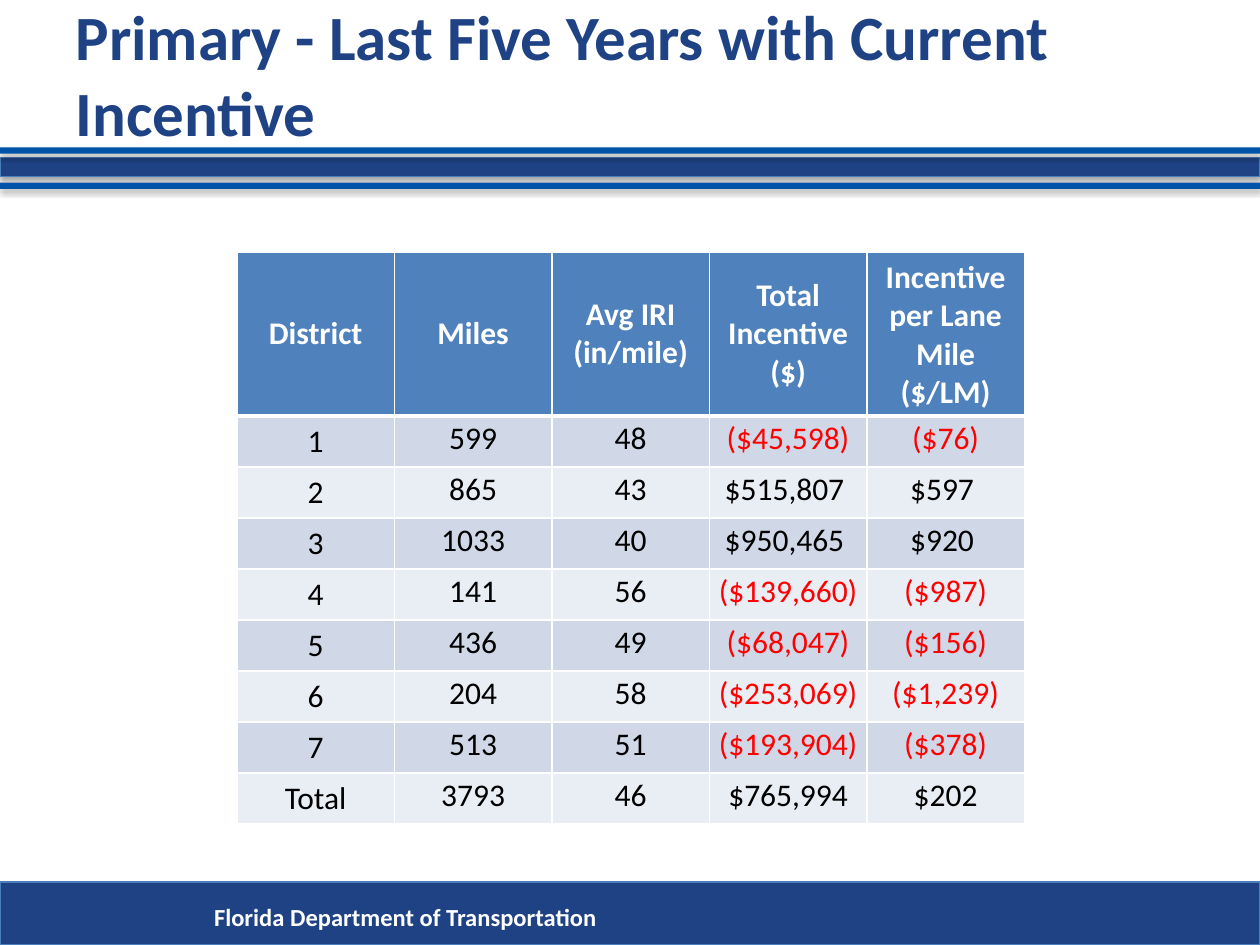
from lxml.etree import SubElement
from pptx import Presentation
from pptx.dml.color import RGBColor
from pptx.enum.shapes import MSO_SHAPE as Shape
from pptx.enum.text import MSO_ANCHOR as Anchor, PP_ALIGN as Align
from pptx.oxml import parse_xml
from pptx.oxml.ns import nsdecls, qn
from pptx.util import Inches, Pt

NAVY = RGBColor(0x1F, 0x42, 0x84)
STRIPE_BLUE = RGBColor(0x00, 0x54, 0xA8)
EDGE_BLUE = RGBColor(0x4B, 0x7E, 0xBC)
HEADER_BLUE = RGBColor(0x4F, 0x81, 0xBD)
ODD_ROW = RGBColor(0xD0, 0xD8, 0xE8)
EVEN_ROW = RGBColor(0xE9, 0xED, 0xF4)
WHITE = RGBColor(0xFF, 0xFF, 0xFF)
BLACK = RGBColor(0x00, 0x00, 0x00)
RED = RGBColor(0xFF, 0x00, 0x00)

HEADINGS = ["District", "Miles", "Avg IRI (in/mile)", "Total Incentive ($)",
            "Incentive per Lane Mile ($/LM)"]
DISTRICTS = [
    ["1", "599", "48", "($45,598)", "($76)"],
    ["2", "865", "43", "$515,807 ", "$597 "],
    ["3", "1033", "40", "$950,465 ", "$920 "],
    ["4", "141", "56", "($139,660)", "($987)"],
    ["5", "436", "49", "($68,047)", "($156)"],
    ["6", "204", "58", "($253,069)", "($1,239)"],
    ["7", "513", "51", "($193,904)", "($378)"],
    ["Total", "3793", "46", "$765,994", "$202"],
]
HEADER_HEIGHT = 1.3
TABLE_HEIGHT = 4.54


def add_run(paragraph, text, size, color, bold=False):
    """Add one Calibri run to a paragraph."""
    run = paragraph.add_run()
    run.text = text
    run.font.name = "Calibri"
    run.font.size = Pt(size)
    run.font.bold = bold
    run.font.color.rgb = color


def add_band(slide, top, height, color, edge=None):
    """Draw a full-width band with a soft shadow below it."""
    band = slide.shapes.add_shape(Shape.RECTANGLE, 0, Inches(top), Inches(10), Inches(height))
    band.fill.solid()
    band.fill.fore_color.rgb = color
    if edge is None:
        band.line.fill.background()
    else:
        band.line.color.rgb = edge
        band.line.width = Pt(0.75)
    band.shadow.inherit = False
    effects = band.element.spPr.find(qn("a:effectLst"))
    shadow = SubElement(effects, qn("a:outerShdw"), blurRad=str(Pt(3.1)), dist=str(Pt(1.8)),
                        dir="5400000", rotWithShape="0")
    shade = SubElement(shadow, qn("a:srgbClr"), val=str(BLACK))
    SubElement(shade, qn("a:alpha"), val="35000")


def add_title(slide, text):
    """Place and fill the title placeholder."""
    title = slide.shapes.title
    title.left, title.top = Inches(0.5), Inches(0.01)
    title.width, title.height = Inches(9), Inches(1.14)
    title.text_frame.vertical_anchor = Anchor.MIDDLE
    heading = title.text_frame.paragraphs[0]
    heading.alignment = Align.LEFT
    add_run(heading, text, 36, NAVY, True)


def add_agency(slide, text):
    """Write the agency name on the footer band."""
    agency = slide.shapes.add_textbox(Inches(1.6), Inches(7.11), Inches(7.98), Inches(0.34))
    agency.text_frame.word_wrap = True
    add_run(agency.text_frame.paragraphs[0], text, 14, WHITE, True)


def set_borders(cell, top=1, bottom=1):
    """Give a cell white borders of the given point widths."""
    properties = cell._tc.get_or_add_tcPr()
    widths = {"lnL": 1, "lnR": 1, "lnT": top, "lnB": bottom}
    for position, (side, width) in enumerate(widths.items()):
        properties.insert(position, parse_xml(
            f'<a:{side} {nsdecls("a")} w="{Pt(width)}"><a:solidFill>'
            f'<a:srgbClr val="{WHITE}"/></a:solidFill></a:{side}>'))


def fill_cell(cell, text, fill, color, bold=False):
    """Fill a cell and centre its text."""
    cell.fill.solid()
    cell.fill.fore_color.rgb = fill
    cell.vertical_anchor = Anchor.MIDDLE
    label = cell.text_frame.paragraphs[0]
    label.alignment = Align.CENTER
    add_run(label, text, 18, color, bold)


def add_incentive_table(slide):
    """Build the table of incentives by district."""
    table = slide.shapes.add_table(
        len(DISTRICTS) + 1, len(HEADINGS), Inches(1.88), Inches(2),
        Inches(6.25), Inches(TABLE_HEIGHT)).table
    table.rows[0].height = Inches(HEADER_HEIGHT)
    for column, heading in enumerate(HEADINGS):
        table.columns[column].width = Inches(1.25)
        cell = table.cell(0, column)
        fill_cell(cell, heading, HEADER_BLUE, WHITE, True)
        set_borders(cell, bottom=3)
    for row, values in enumerate(DISTRICTS, 1):
        table.rows[row].height = Inches((TABLE_HEIGHT - HEADER_HEIGHT) / len(DISTRICTS))
        for column, value in enumerate(values):
            cell = table.cell(row, column)
            fill_cell(cell, value, ODD_ROW if row % 2 else EVEN_ROW,
                      RED if value.startswith("(") else BLACK)
            set_borders(cell, top=3 if row == 1 else 1)
            if column:
                cell.margin_left = cell.margin_right = cell.margin_top = Inches(0.01)


def main():
    """Build and save the slide."""
    presentation = Presentation()
    presentation.slide_width, presentation.slide_height = Inches(10), Inches(7.5)
    slide = presentation.slides.add_slide(presentation.slide_layouts[5])
    add_band(slide, 1.25, 0.15, NAVY, EDGE_BLUE)
    add_band(slide, 1.45, 0.05, STRIPE_BLUE)
    add_band(slide, 1.17, 0.05, STRIPE_BLUE)
    add_band(slide, 7, 0.5, NAVY, EDGE_BLUE)
    add_agency(slide, "Florida Department of Transportation")
    add_title(slide, "Primary - Last Five Years with Current Incentive")
    add_incentive_table(slide)
    presentation.save("out.pptx")


if __name__ == "__main__":
    main()
